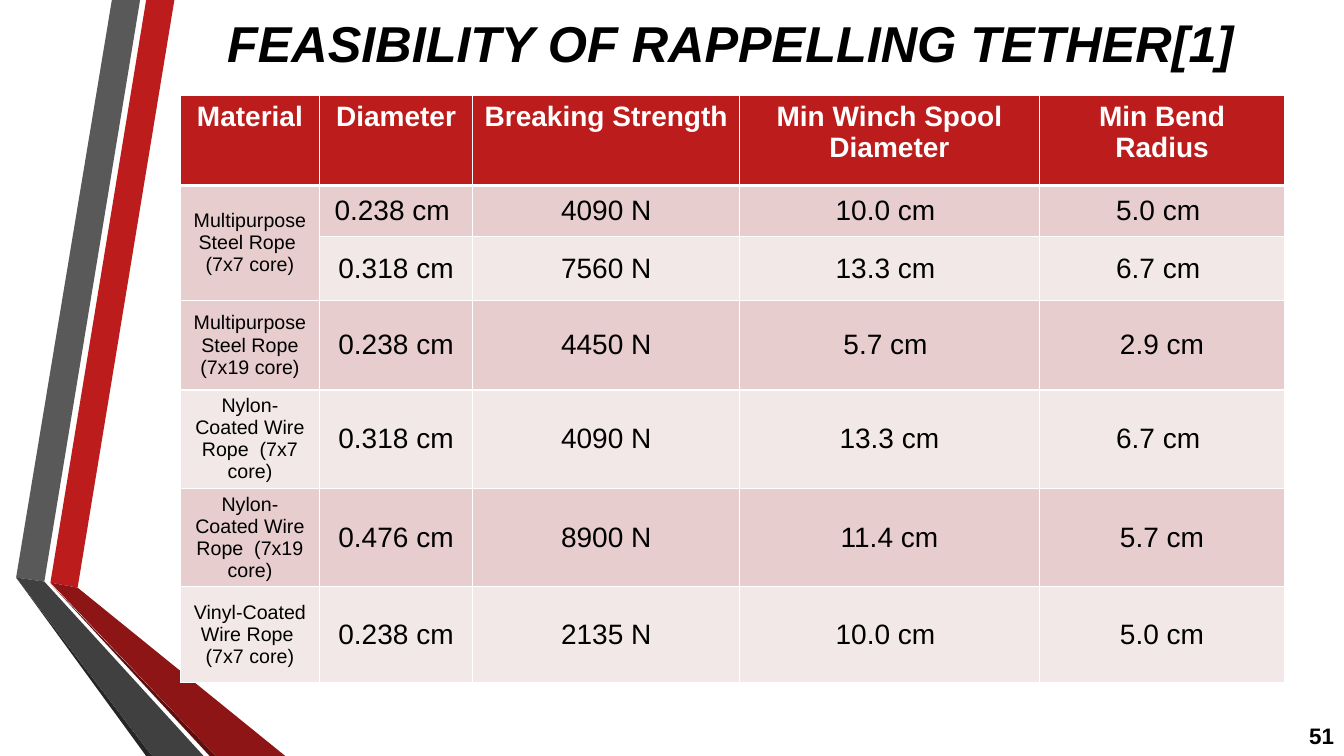
from lxml import etree
from pptx import Presentation
from pptx.dml.color import RGBColor
from pptx.enum.text import MSO_ANCHOR, MSO_AUTO_SIZE, PP_ALIGN
from pptx.oxml.ns import qn
from pptx.util import Inches, Pt

CENTER, RIGHT = PP_ALIGN.CENTER, PP_ALIGN.RIGHT
TOP, MIDDLE = MSO_ANCHOR.TOP, MSO_ANCHOR.MIDDLE
NO_AUTOSIZE = MSO_AUTO_SIZE.NONE
TITLE_ONLY = 5
COLUMNS, ROWS = 160, 90

RED, BLACK, WHITE = "BC1C1C", "000000", "FFFFFF"
BANDS = ("E7CDCD", "F3E8E8")

# Ribbon outlines in grid columns and rows, from back to front
RIBBONS = [
    (RED, [(6, 69.36), (9.24, 69.96), (20.76, 0), (17.4, 0)]),
    ("595959", [(16.68, 0), (13.32, 0), (1.92, 68.76), (5.28, 69.24)]),
    ("262626", [(1.92, 68.76), (17.4, 90), (18.12, 90)]),
    ("5E0E0E", [(6, 69.48), (24.96, 90), (25.68, 90)]),
    ("8D1515", [(6, 69.36), (25.68, 90), (33.96, 90), (9.24, 69.96)]),
    ("404040", [(24.24, 90), (5.28, 69.24), (1.92, 68.76), (18.12, 90)]),
]

COL_WIDTHS = [16.56, 18.24, 31.8, 35.64, 29.28]
ROW_HEIGHTS = [10.68, 6.12, 7.56, 10.68, 10.68, 10.68, 11.4]
TETHERS = [
    ["Material", "Diameter", "Breaking Strength",
     "Min Winch Spool Diameter", "Min Bend Radius"],
    ["Multipurpose Steel Rope  (7x7 core)", "0.238 cm ", "4090 N",
     "10.0 cm ", "5.0 cm "],
    ["", "0.318 cm", "7560 N", "13.3 cm ", "6.7 cm "],
    ["Multipurpose Steel Rope (7x19 core)", "0.238 cm", "4450 N",
     "5.7 cm ", "2.9 cm"],
    ["Nylon-Coated Wire Rope  (7x7 core)", "0.318 cm", "4090 N",
     "13.3 cm", "6.7 cm "],
    ["Nylon-Coated Wire Rope  (7x19 core)", "0.476 cm", "8900 N",
     "11.4 cm", "5.7 cm"],
    ["Vinyl-Coated Wire Rope  (7x7 core)", "0.238 cm", "2135 N",
     "10.0 cm ", "5.0 cm"],
]


def rgb(color):
    return RGBColor.from_string(color)


def write(tf, text, size=20, color=BLACK, bold=False, italic=False,
          align=CENTER, font="Arial"):
    p = tf.paragraphs[0]
    p.alignment = align
    r = p.add_run()
    r.text = text
    r.font.name, r.font.size = font, Pt(size)
    r.font.bold, r.font.italic = bold, italic
    r.font.color.rgb = rgb(color)


def set_border(cell, side, width):
    """Draw a white line on one side (L, R, T or B); call before filling."""
    ln = etree.SubElement(cell._tc.get_or_add_tcPr(), qn(f"a:ln{side}"),
                          w=str(Pt(width)))
    fill = etree.SubElement(ln, qn("a:solidFill"))
    etree.SubElement(fill, qn("a:srgbClr"), val=WHITE)


class Deck:
    """Holds the presentation, its grid and the current slide."""

    def __init__(self):
        self.prs = Presentation()
        self.prs.slide_width = Inches(13.33)
        self.prs.slide_height = Inches(7.5)
        self.s = self.prs.slides.add_slide(self.prs.slide_layouts[TITLE_ONLY])

    def x(self, columns):
        return round(self.prs.slide_width * columns / COLUMNS)

    def y(self, rows):
        return round(self.prs.slide_height * rows / ROWS)

    def box(self, left, top, width, height):
        return self.x(left), self.y(top), self.x(width), self.y(height)

    def ribbon(self, color, points):
        corners = [(self.x(c), self.y(r)) for c, r in points]
        builder = self.s.shapes.build_freeform(*corners[0])
        builder.add_line_segments(corners[1:])
        sp = builder.convert_to_shape()
        sp.shadow.inherit = False
        sp.fill.solid()
        sp.fill.fore_color.rgb = rgb(color)
        sp.line.fill.background()

    def title(self, text, area, **style):
        sp = self.s.shapes.title
        sp.left, sp.top, sp.width, sp.height = self.box(*area)
        self.fill_frame(sp.text_frame, text, **style)

    def label(self, text, area, **style):
        sp = self.s.shapes.add_textbox(*self.box(*area))
        self.fill_frame(sp.text_frame, text, **style)

    def fill_frame(self, tf, text, **style):
        tf.word_wrap, tf.auto_size = True, NO_AUTOSIZE
        tf.vertical_anchor = MIDDLE
        write(tf, text, **style)

    def table(self, data, left, top, widths, heights):
        area = self.box(left, top, sum(widths), sum(heights))
        table = self.s.shapes.add_table(len(heights), len(widths), *area).table
        table.horz_banding = False
        for column, width in zip(table.columns, widths):
            column.width = self.x(width)
        for i, (row, height) in enumerate(zip(table.rows, heights)):
            row.height = self.y(height)
            for j, text in enumerate(data[i]):
                self.cell(table.cell(i, j), text, i == 0, j == 0,
                          BANDS[(i - 1) % 2])
        return table

    def cell(self, cell, text, is_header, is_material, band):
        for side in "LRTB":
            set_border(cell, side, 3 if is_header and side == "B" else 1)
        cell.fill.solid()
        cell.fill.fore_color.rgb = rgb(RED if is_header else band)
        cell.vertical_anchor = TOP if is_header else MIDDLE
        if text:
            write(cell.text_frame, text, bold=is_header,
                  size=14 if is_material and not is_header else 20,
                  color=WHITE if is_header else BLACK)


def main():
    deck = Deck()
    for color, points in RIBBONS:
        deck.ribbon(color, points)
    deck.label("51", (152.8, 85.2, 7.2, 4.8), size=16, bold=True, align=RIGHT)
    deck.title("FEASIBILITY OF RAPPELLING TETHER[1]",
               (19.68, 0.12, 134.64, 9.96), size=36, bold=True, italic=True)
    table = deck.table(TETHERS, 21.48, 11.4, COL_WIDTHS, ROW_HEIGHTS)
    table.cell(1, 0).merge(table.cell(2, 0))
    deck.prs.save("out.pptx")


if __name__ == "__main__":
    main()
